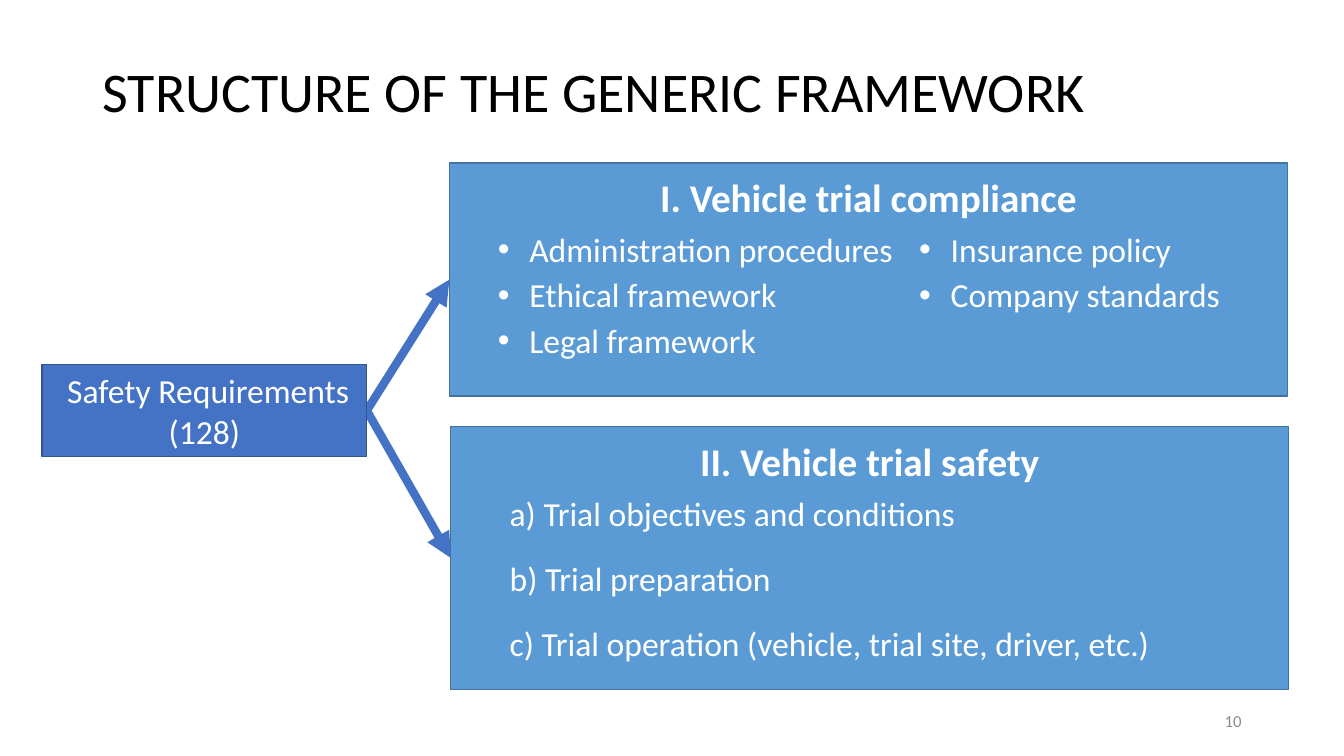
from lxml import etree
from pptx import Presentation
from pptx.dml.color import RGBColor
from pptx.enum import shapes, text
from pptx.oxml import ns
from pptx.util import Pt

COLORS = {
    "panel": "5B9BD5", "panel_edge": "43739E",
    "source": "4472C4", "source_edge": "325491",
    "title": "000000", "light": "FFFFFF", "number": "8C8C8C",
}
FONT = "Calibri"
LINE_HEIGHT = 36
COMPLIANCE_COLUMNS = [
    (27.5, 309, ["Administration procedures", "Ethical framework", "Legal framework"]),
    (328.5, 236, ["Insurance policy", "Company standards"]),
]
SAFETY_STEPS = [
    "a) Trial objectives and conditions",
    "b) Trial preparation",
    "c) Trial operation (vehicle, trial site, driver, etc.)",
]


def rgb(name):
    return RGBColor.from_string(COLORS[name])


def write(frame, wording, size, color="light", align=text.PP_ALIGN.LEFT, bold=False):
    frame.text = wording
    frame.word_wrap = True
    for paragraph in frame.paragraphs:
        paragraph.alignment = align
        for run in paragraph.runs:
            run.font.name = FONT
            run.font.size = Pt(size)
            run.font.bold = bold
            run.font.color.rgb = rgb(color)


def add_label(slide, box, wording, size, **style):
    label = slide.shapes.add_textbox(*map(Pt, box))
    write(label.text_frame, wording, size, **style)
    return label


def add_box(slide, box, fill):
    block = slide.shapes.add_shape(shapes.MSO_SHAPE.RECTANGLE, *map(Pt, box))
    block.shadow.inherit = False
    block.fill.solid()
    block.fill.fore_color.rgb = rgb(fill)
    block.line.color.rgb = rgb(fill + "_edge")
    block.line.width = Pt(1)
    return block


def add_bullet(label):
    properties = label.text_frame.paragraphs[0]._p.get_or_add_pPr()
    properties.set("marL", str(Pt(22.5)))
    properties.set("indent", str(-Pt(22.5)))
    etree.SubElement(properties, ns.qn("a:buFont")).set("typeface", "Arial")
    etree.SubElement(properties, ns.qn("a:buChar")).set("char", "•")


def add_panel(slide, box, heading):
    left, top, width, _ = box
    add_box(slide, box, "panel")
    add_label(slide, (left, top + 4, width, 41), heading, 28,
              align=text.PP_ALIGN.CENTER, bold=True)


def add_compliance(slide, box):
    left, top = box[:2]
    add_panel(slide, box, "I. Vehicle trial compliance")
    for offset, width, topics in COMPLIANCE_COLUMNS:
        for row, topic in enumerate(topics):
            place = (left + offset, top + 43.5 + 32.4 * row, width, LINE_HEIGHT)
            add_bullet(add_label(slide, place, topic, 24))


def add_safety(slide, box):
    left, top = box[:2]
    add_panel(slide, box, "II. Vehicle trial safety")
    for row, step in enumerate(SAFETY_STEPS):
        place = (left + 35, top + 44 + 46.4 * row, 526, LINE_HEIGHT)
        add_label(slide, place, step, 24)


def add_source(slide, box):
    source = add_box(slide, box, "source")
    source.text_frame.vertical_anchor = text.MSO_ANCHOR.MIDDLE
    write(source.text_frame, " Safety Requirements\n(128)", 24,
          align=text.PP_ALIGN.CENTER)


def add_arrow(slide, source_box, target_box):
    """Join the right side of one box to the left side of another."""
    left, top, width, height = source_box
    start = (left + width, top + height / 2)
    end = (target_box[0], target_box[1] + target_box[3] / 2)
    arrow = slide.shapes.add_connector(
        shapes.MSO_CONNECTOR.STRAIGHT, *map(Pt, start + end))
    arrow.line.color.rgb = rgb("source")
    arrow.line.width = Pt(6)
    outline = arrow.line._get_or_add_ln()
    etree.SubElement(outline, ns.qn("a:tailEnd")).set("type", "triangle")
    etree.SubElement(arrow._element.spPr, ns.qn("a:effectLst"))


def set_title(slide, box):
    title = slide.shapes.title
    title.left, title.top, title.width, title.height = map(Pt, box)
    title.text_frame.vertical_anchor = text.MSO_ANCHOR.MIDDLE
    write(title.text_frame, "STRUCTURE OF THE GENERIC FRAMEWORK", 40, color="title")
    title.text_frame.paragraphs[0].line_spacing = 0.9


def add_slide_number(slide, box):
    number = add_label(slide, box, "10", 12, color="number",
                       align=text.PP_ALIGN.RIGHT)
    number.text_frame.vertical_anchor = text.MSO_ANCHOR.MIDDLE


def build_framework(slide):
    source = (30, 260.5, 232, 65.5)
    compliance = (321, 116.5, 598.5, 166.5)
    safety = (322, 304.5, 598.5, 188)
    set_title(slide, (66, 15, 828, 104.5))
    add_compliance(slide, compliance)
    add_safety(slide, safety)
    for target in (compliance, safety):
        add_arrow(slide, source, target)
    add_source(slide, source)
    add_slide_number(slide, (678, 500.5, 216, 29))


def main():
    deck = Presentation()
    deck.slide_width, deck.slide_height = Pt(960), Pt(540)
    title_only = deck.slide_layouts.get_by_name("Title Only")
    build_framework(deck.slides.add_slide(title_only))
    deck.save("out.pptx")


if __name__ == "__main__":
    main()
